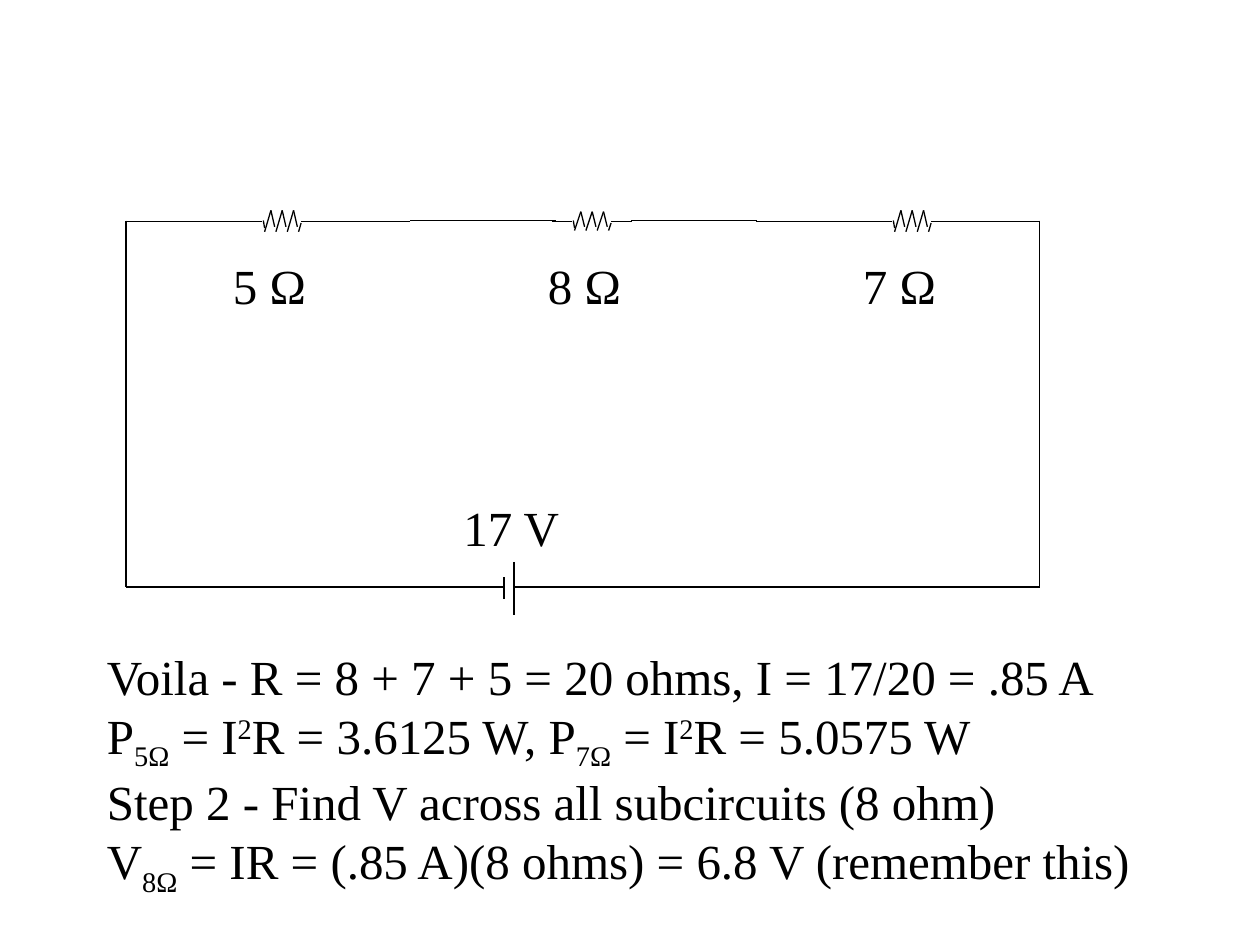
"""Build a slide showing a series circuit and its worked solution."""
from dataclasses import dataclass

from lxml.etree import SubElement
from pptx import Presentation
from pptx.dml.color import RGBColor
from pptx.enum.shapes import MSO_CONNECTOR as Connector
from pptx.enum.text import MSO_AUTO_SIZE as AutoSize
from pptx.oxml.ns import qn
from pptx.util import Inches, Pt


@dataclass(frozen=True)
class Theme:
    font: str = "Times New Roman"
    size: float = 28
    ink: RGBColor = RGBColor(0, 0, 0)
    line_width: float = 0.75


THEME = Theme()
SUBSCRIPT, NORMAL, SUPERSCRIPT = -25, 0, 30

LABELS = [
    ("5 Ω", 1.75, 1.98, 0.79, 0.57),
    ("8 Ω", 4.25, 1.98, 0.79, 0.57),
    ("7 Ω", 6.75, 1.98, 0.79, 0.57),
    ("17 V", 3.58, 3.9, 0.97, 0.57),
]
SOLUTION_BOX = (0.75, 5.08, 8.42, 1.97)
SOLUTION = [
    [("Voila - R = 8 + 7 + 5 = 20 ohms, I = 17/20 = .85 A", NORMAL)],
    [
        ("P", NORMAL), ("5Ω", SUBSCRIPT), (" = I", NORMAL), ("2", SUPERSCRIPT),
        ("R = 3.6125 W, P", NORMAL), ("7Ω", SUBSCRIPT), (" = I", NORMAL),
        ("2", SUPERSCRIPT), ("R = 5.0575 W", NORMAL),
    ],
    [("Step 2 - Find V across all subcircuits (8 ohm)", NORMAL)],
    [
        ("V", NORMAL), ("8Ω", SUBSCRIPT),
        (" = IR = (.85 A)(8 ohms) = 6.8 V (remember this)", NORMAL),
    ],
]

LEFT, RIGHT, TOP, WIRE, BOTTOM = 1, 8.25, 1.75, 1.76, 4.66
SHORT_PLATE, LONG_PLATE = 4, 4.08
WIRES = [
    (LEFT, WIRE, 2, WIRE),
    (2.5, WIRE, 3.25, WIRE),
    (4.41, TOP, 3.25, TOP),
    (5.01, TOP, 6.01, TOP),
    (6, WIRE, 7, WIRE),
    (7.5, WIRE, RIGHT, WIRE),
    (LEFT, TOP, LEFT, BOTTOM),
    (RIGHT, TOP, RIGHT, BOTTOM),
    (LEFT, BOTTOM, SHORT_PLATE, BOTTOM),
    (LONG_PLATE, BOTTOM, RIGHT, BOTTOM),
    (SHORT_PLATE, 4.58, SHORT_PLATE, 4.75),
    (LONG_PLATE, 4.46, LONG_PLATE, 4.88),
]
RESISTORS = [(1.92, 1.67, 1.84), (4.38, 1.68, 1.83), (6.92, 1.67, 1.84)]
TOOTH_COUNT, TOOTH_PITCH = 3, 0.09


def add_line(shapes, x1, y1, x2, y2):
    """Draw one thin wire segment."""
    line = shapes.add_connector(Connector.STRAIGHT, *map(Inches, (x1, y1, x2, y2)))
    line.line.color.rgb = THEME.ink
    line.line.width = Pt(THEME.line_width)
    SubElement(line._element.spPr, qn("a:effectLst"))


def add_resistor(slide, left, peak, trough):
    """Draw a zigzag with a lead on each side, as one group."""
    strokes = [
        (0, WIRE, 0.16, WIRE),
        (0.17, TOP, 0.18, 1.81),
        (0.47, 1.77, 0.45, trough),
        (0.47, WIRE, 0.64, WIRE),
    ]
    for tooth in range(TOOTH_COUNT):
        shift = tooth * TOOTH_PITCH
        strokes.append((0.18 + shift, trough, 0.23 + shift, peak))
        strokes.append((0.23 + shift, peak, 0.26 + shift, 1.8))
    group = slide.shapes.add_group_shape()
    for x1, y1, x2, y2 in strokes:
        add_line(group.shapes, left + x1, y1, left + x2, y2)


def add_text(slide, paragraphs, box):
    """Place unwrapped text made of (wording, baseline) runs."""
    frame = slide.shapes.add_textbox(*map(Inches, box)).text_frame
    frame.word_wrap = False
    frame.auto_size = AutoSize.SHAPE_TO_FIT_TEXT
    for index, runs in enumerate(paragraphs):
        paragraph = frame.add_paragraph() if index else frame.paragraphs[0]
        for wording, baseline in runs:
            run = paragraph.add_run()
            run.text = wording
            run.font.name = THEME.font
            run.font.size = Pt(THEME.size)
            run.font.color.rgb = THEME.ink
            if baseline != NORMAL:
                run._r.get_or_add_rPr().set("baseline", str(baseline * 1000))


def main():
    """Assemble and save the slide."""
    presentation = Presentation()
    presentation.slide_width, presentation.slide_height = Inches(10), Inches(7.5)
    slide = presentation.slides.add_slide(presentation.slide_layouts[6])
    for wire in WIRES:
        add_line(slide.shapes, *wire)
    for resistor in RESISTORS:
        add_resistor(slide, *resistor)
    for wording, *box in LABELS:
        add_text(slide, [[(wording, NORMAL)]], box)
    add_text(slide, SOLUTION, SOLUTION_BOX)
    presentation.save("out.pptx")


if __name__ == "__main__":
    main()
